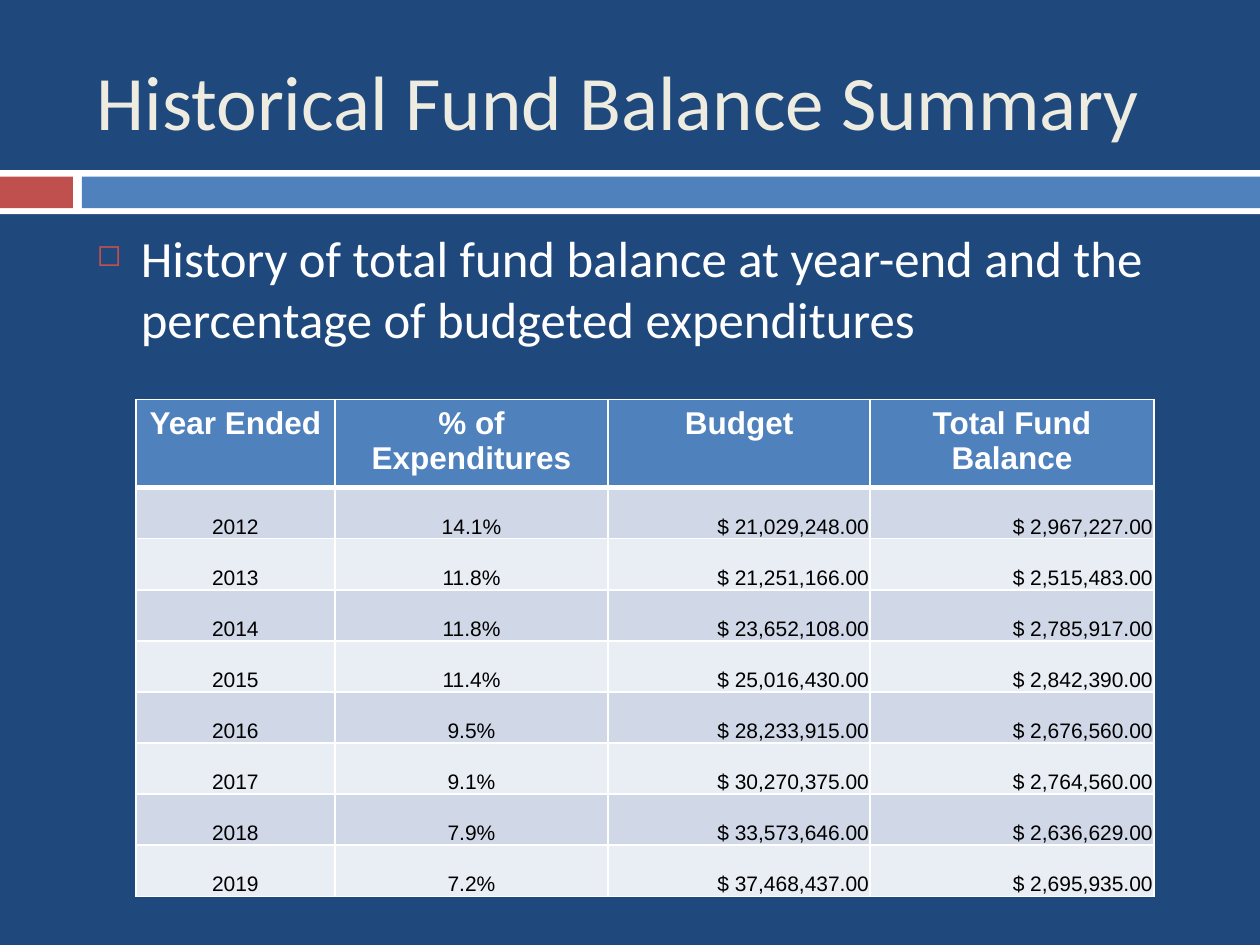
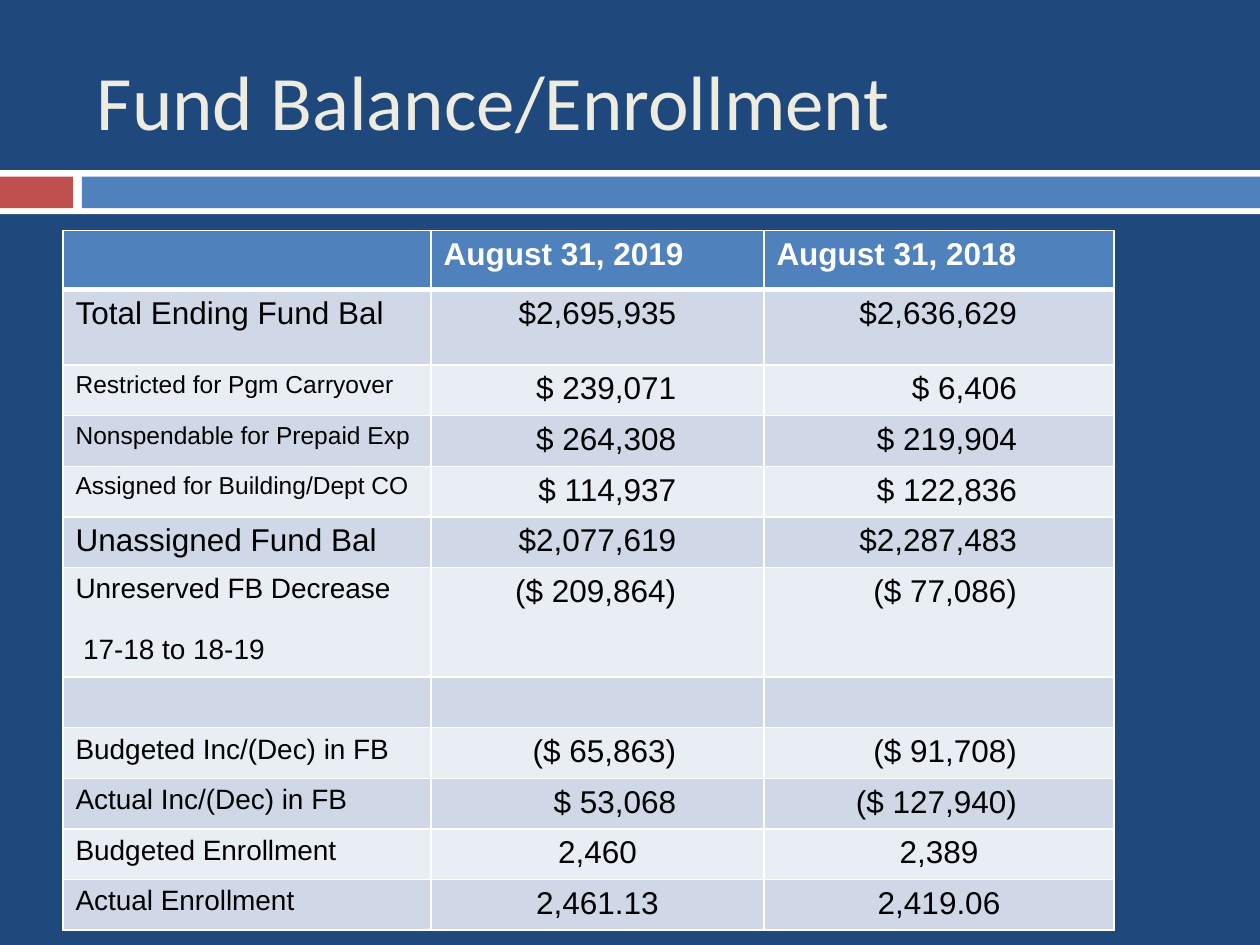
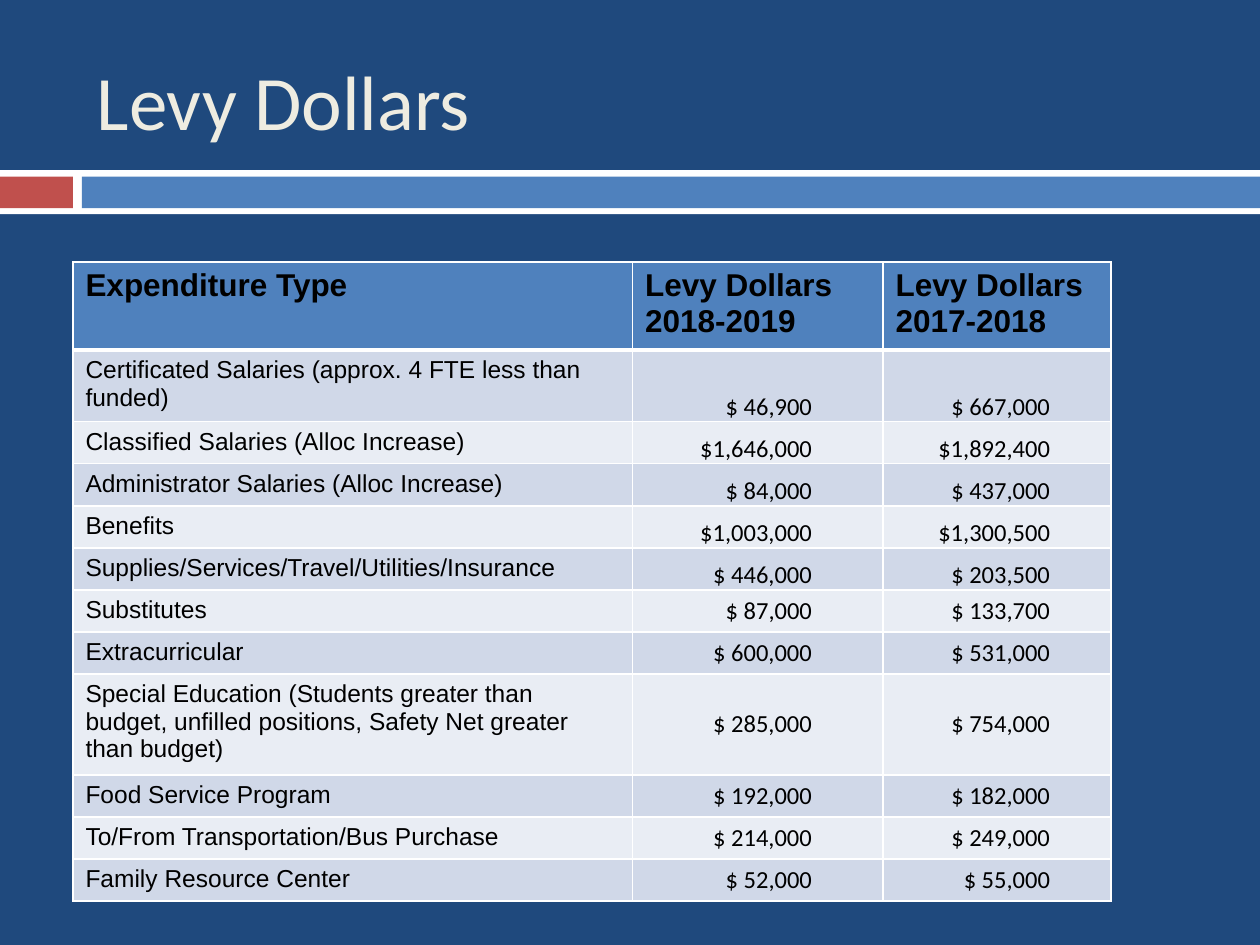
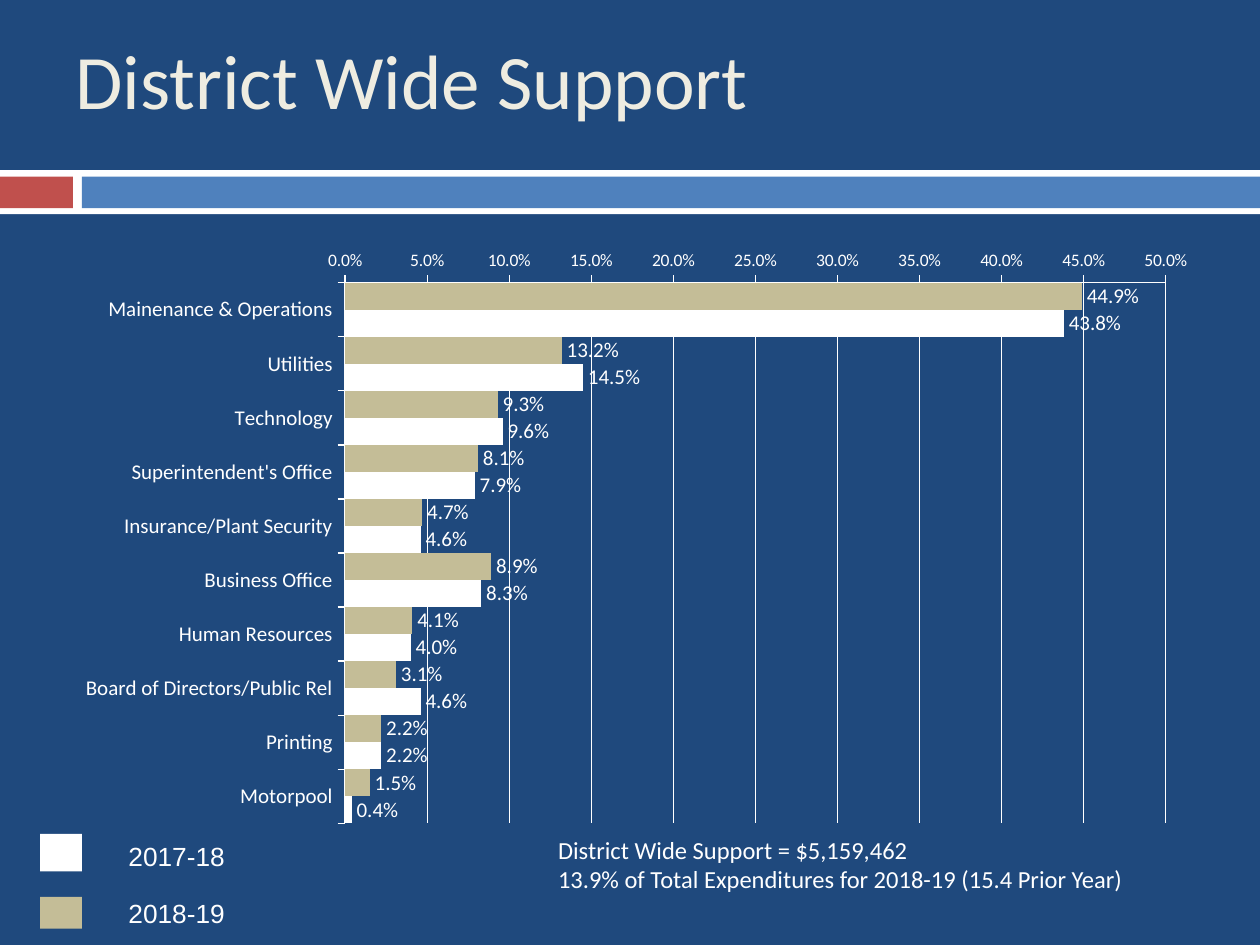
"""Build the four fund balance and levy slides of the district budget deck."""

from lxml.etree import SubElement
from pptx import Presentation
from pptx.chart.data import CategoryChartData
from pptx.dml.color import RGBColor
from pptx.enum.chart import XL_CHART_TYPE, XL_LABEL_POSITION, XL_TICK_MARK
from pptx.enum.shapes import MSO_SHAPE
from pptx.enum.text import MSO_ANCHOR, PP_ALIGN
from pptx.oxml import parse_xml
from pptx.oxml.ns import nsdecls, qn
from pptx.util import Cm, Pt

COLORS = {
    "navy": "1F497D", "white": "FFFFFF", "red": "C0504D", "blue": "4F81BD",
    "cream": "EEECE1", "tan": "C4BD97", "black": "000000",
    "band_dark": "D0D8E8", "band_light": "E9EDF4",
}
BANDS = [
    ("white", (0, 3.43, 25.4, 0.89)),
    ("red", (0, 3.56, 1.47, 0.64)),
    ("blue", (1.65, 3.56, 23.75, 0.64)),
]
TITLE_PLACE = (1.7, 0.64, 22.66, 2.74)
BODY_PLACE = (1.7, 4.45, 22.66, 12.5)

HISTORY_INTRO = "History of total fund balance at year-end and the percentage of budgeted expenditures"
HISTORY = {
    "corner": (2.74, 8.05),
    "columns": [4.01, 5.51, 5.28, 5.72],
    "heights": [1.09] + [1.03] * 8,
    "rows": [
        ("Year Ended", "% of Expenditures", "Budget", "Total Fund Balance"),
        ("2012", "14.1%", "$ 21,029,248.00", "$ 2,967,227.00"),
        ("2013", "11.8%", "$ 21,251,166.00", "$ 2,515,483.00"),
        ("2014", "11.8%", "$ 23,652,108.00", "$ 2,785,917.00"),
        ("2015", "11.4%", "$ 25,016,430.00", "$ 2,842,390.00"),
        ("2016", "9.5%", "$ 28,233,915.00", "$ 2,676,560.00"),
        ("2017", "9.1%", "$ 30,270,375.00", "$ 2,764,560.00"),
        ("2018", "7.9%", "$ 33,573,646.00", "$ 2,636,629.00"),
        ("2019", "7.2%", "$ 37,468,437.00", "$ 2,695,935.00"),
    ],
}
ENROLLMENT = {
    "corner": (1.27, 4.65),
    "columns": [7.42, 6.71, 7.06],
    "heights": [1.19, 1.52] + [1.02] * 4 + [1.6] + [1.02] * 5,
    "rows": [
        ("", "August 31, 2019", "August 31, 2018"),
        ("Total Ending Fund Bal", "$2,695,935", "$2,636,629"),
        ("Restricted for Pgm Carryover", "$ 239,071", "$ 6,406"),
        ("Nonspendable for Prepaid Exp", "$ 264,308", "$ 219,904"),
        ("Assigned for Building/Dept CO", "$ 114,937", "$ 122,836"),
        ("Unassigned Fund Bal", "$2,077,619", "$2,287,483"),
        ("Unreserved FB Decrease\n17-18 to 18-19", "($ 209,864)", "($ 77,086)"),
        ("", "", ""),
        ("Budgeted Inc/(Dec) in FB", "($ 65,863)", "($ 91,708)"),
        ("Actual Inc/(Dec) in FB", "$ 53,068", "($ 127,940)"),
        ("Budgeted Enrollment", "2,460", "2,389"),
        ("Actual Enrollment", "2,461.13", "2,419.06"),
    ],
}
ENROLLMENT_LABEL_SIZES = [18, 18, 14, 14, 14, 18, 16, 18, 16, 16, 16, 16]
ENROLLMENT_INSETS = [None, 1.77, 1.96]

LEVY = {
    "corner": (1.47, 5.28),
    "columns": [11.28, 5.05, 4.6],
    "heights": [1.52, 0.97] + [0.84] * 10,
    "rows": [
        ("Expenditure Type", "Levy Dollars\n2018-2019", "Levy Dollars\n2017-2018"),
        ("Certificated Salaries (approx. 4 FTE less than funded)", "$ 46,900", "$ 667,000"),
        ("Classified Salaries (Alloc Increase)", "$1,646,000", "$1,892,400"),
        ("Administrator Salaries (Alloc Increase)", "$ 84,000", "$ 437,000"),
        ("Benefits", "$1,003,000", "$1,300,500"),
        ("Supplies/Services/Travel/Utilities/Insurance", "$ 446,000", "$ 203,500"),
        ("Substitutes", "$ 87,000", "$ 133,700"),
        ("Extracurricular", "$ 600,000", "$ 531,000"),
        ("Special Education (Students greater than budget, unfilled positions, "
         "Safety Net greater than budget)", "$ 285,000", "$ 754,000"),
        ("Food Service Program", "$ 192,000", "$ 182,000"),
        ("To/From Transportation/Bus Purchase", "$ 214,000", "$ 249,000"),
        ("Family Resource Center", "$ 52,000", "$ 55,000"),
    ],
}
LEVY_INSETS = [None, 1.43, 1.23]
LEVY_BOTTOM_ROWS = range(1, 6)
LEVY_MIDDLE_ROW = 8

SUPPORT = [
    ("Mainenance & Operations", 0.449, 0.438),
    ("Utilities", 0.132, 0.145),
    ("Technology", 0.093, 0.096),
    ("Superintendent's Office", 0.081, 0.079),
    ("Insurance/Plant Security", 0.047, 0.046),
    ("Business Office", 0.089, 0.083),
    ("Human Resources", 0.041, 0.04),
    ("Board of Directors/Public Rel", 0.031, 0.046),
    ("Printing", 0.022, 0.022),
    ("Motorpool", 0.015, 0.004),
]
SUPPORT_SERIES = [("2018-19", "tan"), ("2017-18", "white")]
SUPPORT_PLOT = {"x": 0.232, "y": 0.1, "w": 0.73, "h": 0.872}
SUPPORT_NOTE = ("District Wide Support = $5,159,462\n"
                "13.9% of Total Expenditures for 2018-19 (15.4 Prior Year)")
LEGEND = [
    ("2017-18", "white", (0.81, 16.81, 0.84, 0.76), (2.34, 16.81, 2.54, 0.89)),
    ("2018-19", "tan", (0.81, 18.08, 0.84, 0.64), (2.34, 17.96, 2.54, 0.89)),
]


def rgb(name):
    return RGBColor.from_string(COLORS[name])


def lengths(place):
    return [Cm(value) for value in place]


def paint(fill, color):
    fill.solid()
    fill.fore_color.rgb = rgb(color)


def style_font(font, name, size, color, bold=False):
    font.name, font.size, font.bold = name, Pt(size), bold
    font.color.rgb = rgb(color)


def write(frame, text, name, size, color, bold=False, align=PP_ALIGN.LEFT):
    frame.text = text
    for para in frame.paragraphs:
        para.alignment = align
        style_font(para.font, name, size, color, bold)
        for span in para.runs:
            style_font(span.font, name, size, color, bold)


def indent(para, left, first=0):
    properties = para._p.get_or_add_pPr()
    properties.set("marL", str(Cm(left)))
    properties.set("indent", str(Cm(first)))
    return properties


def add_box(page, place, color):
    box = page.shapes.add_shape(MSO_SHAPE.RECTANGLE, *lengths(place))
    box.shadow.inherit = False
    paint(box.fill, color)
    box.line.fill.background()


def add_text(page, place, text, name, size, color="white"):
    frame = page.shapes.add_textbox(*lengths(place)).text_frame
    frame.word_wrap = True
    write(frame, text, name, size, color)
    return frame


def add_page(deck, title, place=TITLE_PLACE):
    page = deck.slides.add_slide(deck.slide_layouts[6])
    for color, band in BANDS:
        add_box(page, band, color)
    frame = add_text(page, place, title, "Calibri", 44, "cream")
    frame.vertical_anchor = MSO_ANCHOR.MIDDLE
    return page


def set_borders(cell, row_number):
    widths = {"L": 1, "R": 1, "T": 3 if row_number == 1 else 1, "B": 3 if row_number == 0 else 1}
    properties = cell._tc.get_or_add_tcPr()
    for position, (side, width) in enumerate(widths.items()):
        line = SubElement(properties, qn(f"a:ln{side}"), w=str(Pt(width)))
        SubElement(SubElement(line, qn("a:solidFill")), qn("a:srgbClr"), val=COLORS["white"])
        properties.insert(position, line)


def tighten(cell):
    cell.vertical_anchor = MSO_ANCHOR.BOTTOM
    cell.margin_left = cell.margin_right = cell.margin_top = Cm(0.02)
    cell.margin_bottom = 0


def add_grid(page, content):
    rows, columns, heights = content["rows"], content["columns"], content["heights"]
    place = (*content["corner"], sum(columns), sum(heights))
    table = page.shapes.add_table(len(rows), len(columns), *lengths(place)).table
    for column, width in zip(table.columns, columns):
        column.width = Cm(width)
    for row_number, (row, height) in enumerate(zip(table.rows, heights)):
        row.height = Cm(height)
        band = "blue" if row_number == 0 else ("band_light", "band_dark")[row_number % 2]
        for cell in row.cells:
            paint(cell.fill, band)
            set_borders(cell, row_number)
    return table


def each_cell(table, content):
    for row_number, texts in enumerate(content["rows"]):
        for column_number, text in enumerate(texts):
            yield row_number, column_number, table.cell(row_number, column_number), text


def build_history(deck):
    page = add_page(deck, "Historical Fund Balance Summary")
    para = add_text(page, BODY_PLACE, HISTORY_INTRO, "Calibri", 29).paragraphs[0]
    para.space_before = Pt(7)
    properties = indent(para, 0.89, -0.89)
    SubElement(SubElement(properties, qn("a:buClr")), qn("a:srgbClr"), val=COLORS["red"])
    SubElement(properties, qn("a:buSzPct"), val="60000")
    SubElement(properties, qn("a:buChar"), char="◻")
    for row, column, cell, text in each_cell(add_grid(page, HISTORY), HISTORY):
        if row == 0:
            write(cell.text_frame, text, "Arial", 18, "white", True, PP_ALIGN.CENTER)
        else:
            align = PP_ALIGN.CENTER if column < 2 else PP_ALIGN.RIGHT
            write(cell.text_frame, text, "Arial", 12, "black", align=align)
            tighten(cell)


def build_enrollment(deck):
    page = add_page(deck, "Fund Balance/Enrollment")
    for row, column, cell, text in each_cell(add_grid(page, ENROLLMENT), ENROLLMENT):
        frame = cell.text_frame
        if row == 0:
            write(frame, text, "Arial", 18, "white", True)
        elif column == 0:
            write(frame, text, "Arial", ENROLLMENT_LABEL_SIZES[row], "black")
            for para in frame.paragraphs[1:]:
                para.space_before = Pt(17)
                indent(para, 0.15)
        elif "$" in text:
            write(frame, text, "Arial", 18, "black", align=PP_ALIGN.RIGHT)
            cell.margin_right = Cm(ENROLLMENT_INSETS[column])
        else:
            write(frame, text, "Arial", 18, "black", align=PP_ALIGN.CENTER)


def build_levy(deck):
    page = add_page(deck, "Levy Dollars")
    for row, column, cell, text in each_cell(add_grid(page, LEVY), LEVY):
        if row == 0:
            write(cell.text_frame, text, "Arial", 18, "black", True)
        elif column == 0:
            write(cell.text_frame, text, "Arial", 14, "black")
        else:
            write(cell.text_frame, text, "Calibri", 14, "black", align=PP_ALIGN.RIGHT)
            if row in LEVY_BOTTOM_ROWS:
                tighten(cell)
            elif row == LEVY_MIDDLE_ROW:
                cell.vertical_anchor = MSO_ANCHOR.MIDDLE
            cell.margin_right = Cm(LEVY_INSETS[column])


def place_plot(chart):
    area = chart.element.find(".//" + qn("c:plotArea"))
    for layout in area.findall(qn("c:layout")):
        area.remove(layout)
    modes = '<c:layoutTarget val="inner"/><c:xMode val="edge"/><c:yMode val="edge"/>'
    sizes = "".join(f'<c:{key} val="{value}"/>' for key, value in SUPPORT_PLOT.items())
    area.insert(0, parse_xml(
        f'<c:layout {nsdecls("c")}><c:manualLayout>{modes}{sizes}</c:manualLayout></c:layout>'))


def add_support_chart(page):
    names, *values = zip(*SUPPORT)
    data = CategoryChartData(number_format="0.0%")
    data.categories = names
    for (name, _), numbers in zip(SUPPORT_SERIES, values):
        data.add_series(name, numbers)
    chart = page.shapes.add_chart(XL_CHART_TYPE.BAR_CLUSTERED, *lengths(BODY_PLACE), data).chart
    chart.has_legend = chart.has_title = False
    style_font(chart.font, "Calibri", 18, "white")
    place_plot(chart)

    plot = chart.plots[0]
    plot.gap_width, plot.overlap, plot.vary_by_categories = 0, 0, False
    for series, (_, color) in zip(plot.series, SUPPORT_SERIES):
        paint(series.format.fill, color)
        series.invert_if_negative = False
        labels = series.data_labels
        labels.show_value = True
        labels.position = XL_LABEL_POSITION.OUTSIDE_END
        labels.number_format, labels.number_format_is_linked = "0.0%", False
        style_font(labels.font, "Calibri", 12, "white")

    category_axis, value_axis = chart.category_axis, chart.value_axis
    category_axis.reverse_order = True
    category_axis.has_major_gridlines = False
    value_axis.minimum_scale, value_axis.maximum_scale, value_axis.major_unit = 0, 0.5, 0.05
    value_axis.has_major_gridlines = True
    value_axis.tick_labels.number_format = "0.0%"
    value_axis.tick_labels.number_format_is_linked = False
    for axis, size in ((category_axis, 12), (value_axis, 10)):
        axis.major_tick_mark = XL_TICK_MARK.OUTSIDE
        style_font(axis.tick_labels.font, "Calibri", size, "white")
    for line in (category_axis.format.line, value_axis.format.line,
                 value_axis.major_gridlines.format.line):
        line.color.rgb = rgb("white")
        line.width = Pt(0.75)


def build_support(deck):
    page = add_page(deck, "District Wide Support", (1.27, 0, 22.86, 3.18))
    add_support_chart(page)
    add_text(page, (11, 16.71, 12.27, 1.7), SUPPORT_NOTE, "Calibri", 14)
    for label, color, swatch_place, label_place in LEGEND:
        add_box(page, swatch_place, color)
        add_text(page, label_place, label, "Arial", 15)


def main():
    deck = Presentation()
    deck.slide_width, deck.slide_height = Cm(25.4), Cm(19.05)
    paint(deck.slide_master.background.fill, "navy")
    for build in (build_history, build_enrollment, build_levy, build_support):
        build(deck)
    deck.save("out.pptx")


if __name__ == "__main__":
    main()
